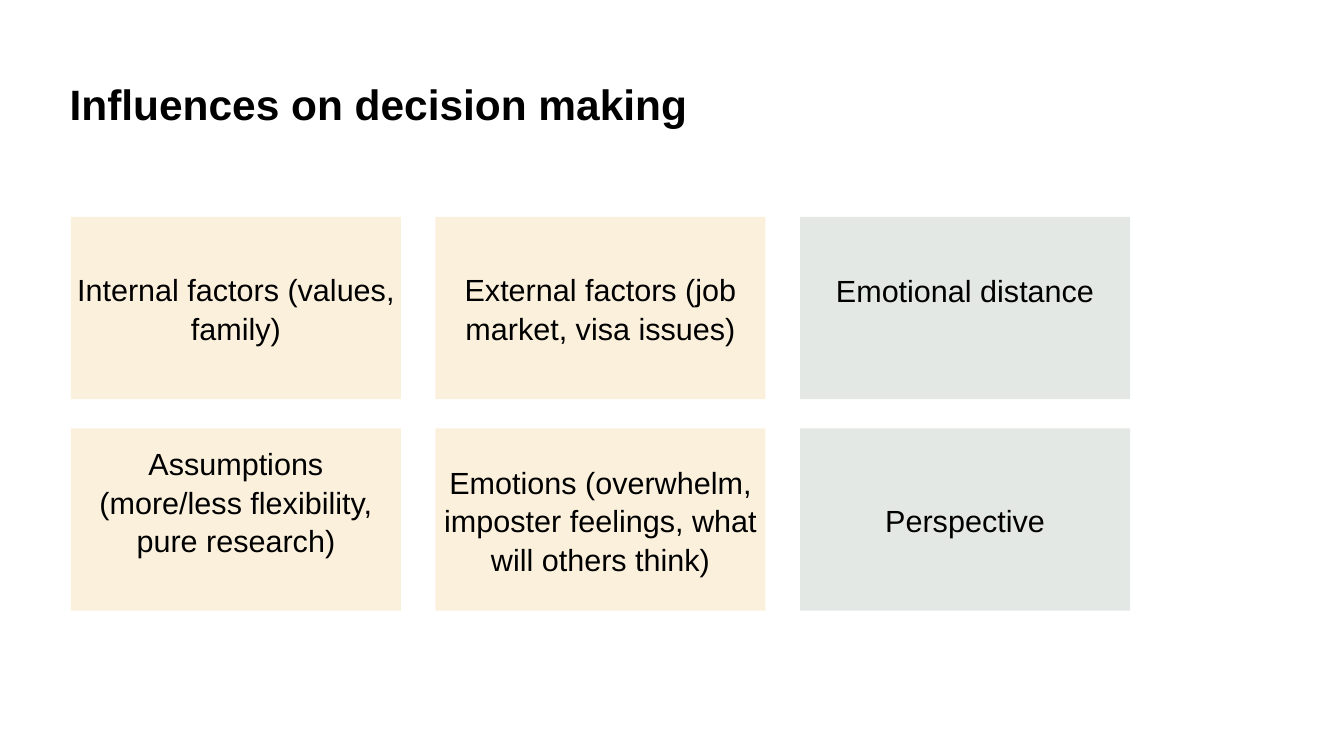
from dataclasses import dataclass
from pptx import Presentation
from pptx.dml.color import RGBColor
from pptx.enum.shapes import MSO_SHAPE
from pptx.enum.text import MSO_ANCHOR, PP_ALIGN
from pptx.util import Inches, Pt

TITLE = "Influences on decision making"
CARDS = [
    ["Internal factors (values, family)",
     "External factors (job market, visa issues)",
     "Emotional distance"],
    ["Assumptions (more/less flexibility, pure research)",
     "Emotions (overwhelm, imposter feelings, what will others think)",
     "Perspective"],
]
RAISED = {(0, 2), (1, 0)}


@dataclass(frozen=True)
class Theme:
    font: str = "Arial"
    ink: str = "000000"
    column_fills: tuple = ("FBF0DC", "FBF0DC", "E4E8E5")
    title_size: int = 50
    card_size: int = 36
    line_spacing: float = 1.05


THEME = Theme()
SLIDE_WIDTH, SLIDE_HEIGHT = 21.99, 12.37
GRID_LEFT, GRID_TOP = 1.16, 3.55
CARD_WIDTH, CARD_HEIGHT = 5.4, 2.98
COLUMN_GAP, ROW_GAP = 0.565, 0.48
SIDE_MARGIN, END_MARGIN, RAISED_MARGIN = 0.08, 0.05, 0.65


def write(shape, text, size, bold=False):
    shape.text_frame.text = text
    shape.text_frame.word_wrap = True
    paragraph = shape.text_frame.paragraphs[0]
    font = paragraph.runs[0].font
    font.name, font.size, font.bold = THEME.font, Pt(size), bold
    font.color.rgb = RGBColor.from_string(THEME.ink)
    return paragraph


def set_margins(frame, side, top, bottom):
    frame.margin_left = frame.margin_right = Inches(side)
    frame.margin_top, frame.margin_bottom = Inches(top), Inches(bottom)


def add_card(slide, row, column, text):
    left = GRID_LEFT + column * (CARD_WIDTH + COLUMN_GAP)
    top = GRID_TOP + row * (CARD_HEIGHT + ROW_GAP)
    card = slide.shapes.add_shape(
        MSO_SHAPE.RECTANGLE, Inches(left), Inches(top),
        Inches(CARD_WIDTH), Inches(CARD_HEIGHT))
    card.shadow.inherit = False
    card.fill.solid()
    card.fill.fore_color.rgb = RGBColor.from_string(THEME.column_fills[column])
    card.line.fill.background()
    paragraph = write(card, text, THEME.card_size)
    paragraph.alignment = PP_ALIGN.CENTER
    paragraph.line_spacing = THEME.line_spacing
    card.text_frame.vertical_anchor = MSO_ANCHOR.MIDDLE
    bottom = RAISED_MARGIN if (row, column) in RAISED else END_MARGIN
    set_margins(card.text_frame, SIDE_MARGIN, END_MARGIN, bottom)


def main():
    presentation = Presentation()
    presentation.slide_width = Inches(SLIDE_WIDTH)
    presentation.slide_height = Inches(SLIDE_HEIGHT)
    slide = presentation.slides.add_slide(presentation.slide_layouts[6])

    title = slide.shapes.add_textbox(
        Inches(1.14), Inches(1.27), Inches(17.94), Inches(1.42))
    write(title, TITLE, THEME.title_size, bold=True)
    set_margins(title.text_frame, 0, 0, 0)

    for row, texts in enumerate(CARDS):
        for column, text in enumerate(texts):
            add_card(slide, row, column, text)

    presentation.save("out.pptx")


if __name__ == "__main__":
    main()
